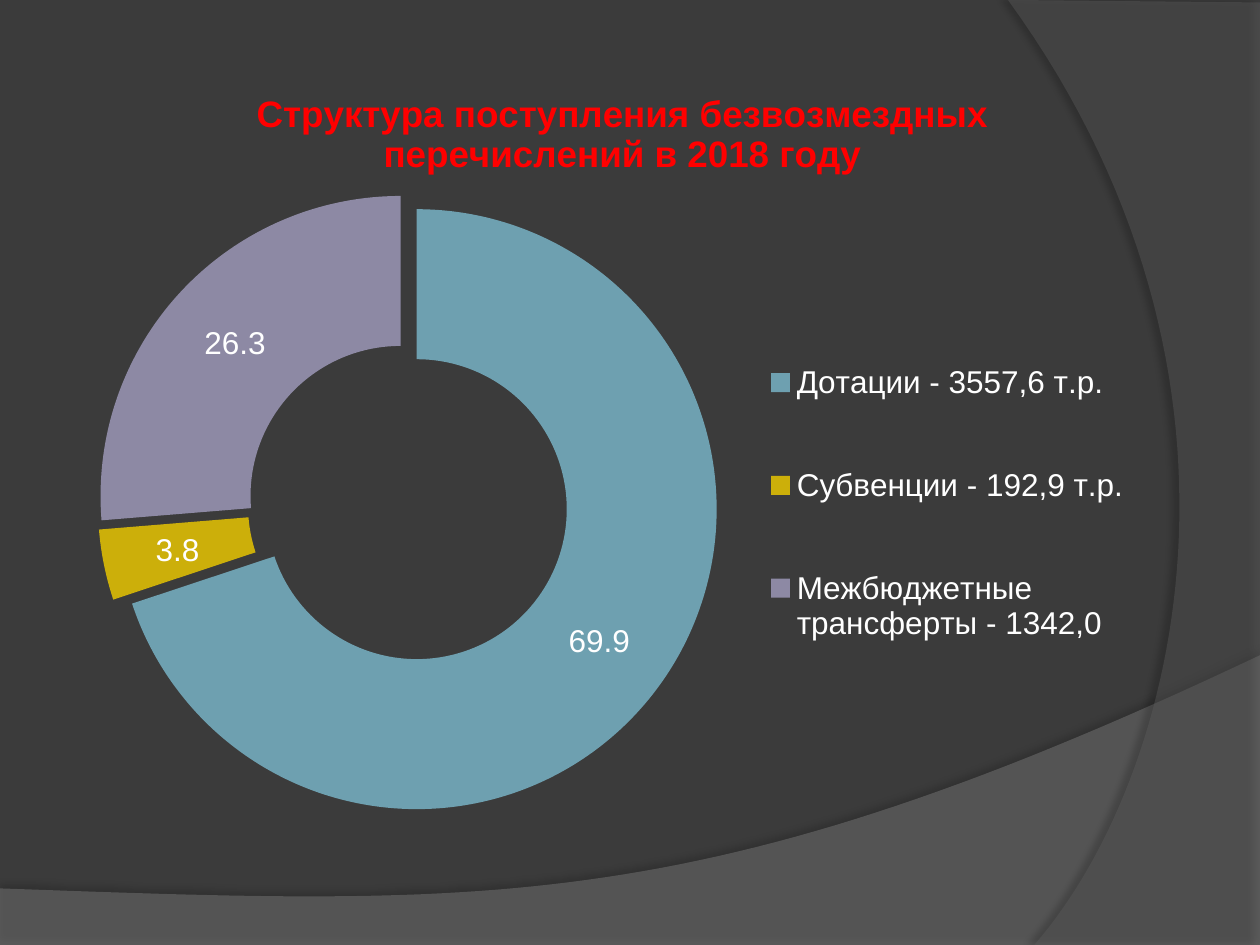
"""Builds the slide on the structure of gratuitous receipts in 2018."""
from typing import NamedTuple

from lxml.etree import SubElement
from pptx import Presentation
from pptx.chart.data import CategoryChartData
from pptx.dml.color import RGBColor
from pptx.enum.chart import XL_CHART_TYPE, XL_LEGEND_POSITION
from pptx.oxml.ns import qn
from pptx.util import Cm, Pt

COLORS = {
    "background": "3B3B3B", "wave": "7F7F7F", "arc": "5E5E5E", "shadow": "000000",
    "title": "FF0000", "text": "FFFFFF",
    "grants": "6EA0B0", "subventions": "CCAF0A", "transfers": "8D89A4",
}
HEADING = "Структура поступления безвозмездных перечислений в 2018 году"
TITLE_FONT = {"name": "Arial", "size": Pt(21), "bold": True}
TEXT_FONT = {"name": "Arial", "size": Pt(18), "bold": False}
CURVE_STEPS = 60


class Receipt(NamedTuple):
    label: str
    share: float
    color: str


class Sweep(NamedTuple):
    corners: list
    curve: list
    color: str
    opacity: int
    shadow_opacity: int
    shadow_distance: float
    shadow_angle: int


RECEIPTS = [
    Receipt("Дотации - 3557,6 т.р.", 69.9, "grants"),
    Receipt("Субвенции - 192,9 т.р.", 3.8, "subventions"),
    Receipt("Межбюджетные трансферты - 1342,0", 26.3, "transfers"),
]
SWEEPS = [
    Sweep([(0, 17.91), (0, 19.05)],
          [(25.4, 13.21), (14.2, 18.52), (9.93, 18.26), (0, 17.91)],
          "wave", 45, 35, 3.5, 270),
    Sweep([(25.4, 0.05), (25.4, 19.05)],
          [(20.85, 19.05), (23.75, 15.72), (25.86, 7.62), (20.32, 0)],
          "arc", 40, 45, 4, 180),
]
SWEEPS[0].corners.append((25.4, 19.05))


def rgb(name: str) -> RGBColor:
    """Return the named colour."""
    return RGBColor.from_string(COLORS[name])


def style_font(font, formats: dict, color: str) -> None:
    """Apply format values and a colour to a font."""
    for attribute, value in formats.items():
        setattr(font, attribute, value)
    font.color.rgb = rgb(color)


def curve_points(controls: list) -> list:
    """Return points along a cubic curve."""
    points = []
    for step in range(CURVE_STEPS + 1):
        t = step / CURVE_STEPS
        weights = ((1 - t) ** 3, 3 * t * (1 - t) ** 2, 3 * t ** 2 * (1 - t), t ** 3)
        points.append(tuple(sum(w * c[axis] for w, c in zip(weights, controls))
                            for axis in (0, 1)))
    return points


def add_alpha(color_element, percent: int) -> None:
    """Make a colour element partly transparent."""
    SubElement(color_element, qn("a:alpha"), val=str(percent * 1000))


def draw_sweep(slide, sweep: Sweep) -> None:
    """Draw one translucent background sweep with its shadow."""
    outline = [(Cm(x), Cm(y)) for x, y in sweep.corners + curve_points(sweep.curve)]
    builder = slide.shapes.build_freeform(*outline[0])
    builder.add_line_segments(outline[1:], close=True)
    shape = builder.convert_to_shape()
    shape.fill.solid()
    shape.fill.fore_color.rgb = rgb(sweep.color)
    shape.line.fill.background()
    shape.shadow.inherit = False
    properties = shape._element.spPr
    add_alpha(properties.find(qn("a:solidFill"))[0], sweep.opacity)
    shadow = SubElement(
        properties.find(qn("a:effectLst")), qn("a:outerShdw"), blurRad=str(Pt(4)),
        dist=str(Pt(sweep.shadow_distance)), dir=str(sweep.shadow_angle * 60000),
        algn="ctr", rotWithShape="0")
    add_alpha(SubElement(shadow, qn("a:srgbClr"), val=COLORS["shadow"]),
              sweep.shadow_opacity)


def place(part, index: int, box: dict, inner: bool = False) -> None:
    """Give a chart part a manual layout in fractions of the chart."""
    for old in part.findall(qn("c:layout")):
        part.remove(old)
    layout = SubElement(part, qn("c:layout"))
    part.insert(index, layout)
    manual = SubElement(layout, qn("c:manualLayout"))
    if inner:
        SubElement(manual, qn("c:layoutTarget"), val="inner")
    for key in ("x", "y"):
        SubElement(manual, qn(f"c:{key}Mode"), val="edge")
    for key, value in box.items():
        SubElement(manual, qn(f"c:{key}"), val=str(value))


def draw_receipts(slide, receipts: list) -> None:
    """Draw the doughnut chart of receipts."""
    data = CategoryChartData()
    data.categories = [receipt.label for receipt in receipts]
    data.add_series(HEADING, [receipt.share for receipt in receipts])
    chart = slide.shapes.add_chart(XL_CHART_TYPE.DOUGHNUT, Cm(0.79), Cm(0.99),
                                   Cm(23.62), Cm(17.27), data).chart
    style_font(chart.font, TEXT_FONT, "text")

    chart.has_title = True
    heading = chart.chart_title.text_frame
    heading.text = HEADING
    style_font(heading.paragraphs[0].runs[0].font, TITLE_FONT, "title")
    place(chart.chart_title._element, 1, {"x": 0.18, "y": 0.04})

    chart.has_legend = True
    chart.legend.position = XL_LEGEND_POSITION.RIGHT
    chart.legend.include_in_layout = False
    style_font(chart.legend.font, TEXT_FONT, "text")
    place(chart.legend._element, 1, {"x": 0.61, "y": 0.29, "w": 0.33, "h": 0.48})

    plot = chart.plots[0]
    plot.vary_by_categories = True
    place(chart._chartSpace.chart.plotArea, 0,
          {"x": 0.05, "y": 0.16, "w": 0.53, "h": 0.74}, inner=True)
    series = plot.series[0]
    explosion = SubElement(series._element, qn("c:explosion"), val="7")
    series._element.find(qn("c:tx")).addnext(explosion)
    for index, receipt in enumerate(receipts):
        fill = series.points[index].format.fill
        fill.solid()
        fill.fore_color.rgb = rgb(receipt.color)

    labels = series.data_labels
    labels.show_value = True
    style_font(labels.font, TEXT_FONT, "text")


def main() -> None:
    """Build and save the slide."""
    presentation = Presentation()
    presentation.slide_width, presentation.slide_height = Cm(25.4), Cm(19.05)
    slide = presentation.slides.add_slide(presentation.slide_layouts[6])
    slide.background.fill.solid()
    slide.background.fill.fore_color.rgb = rgb("background")
    for sweep in SWEEPS:
        draw_sweep(slide, sweep)
    draw_receipts(slide, RECEIPTS)
    presentation.save("out.pptx")


if __name__ == "__main__":
    main()
